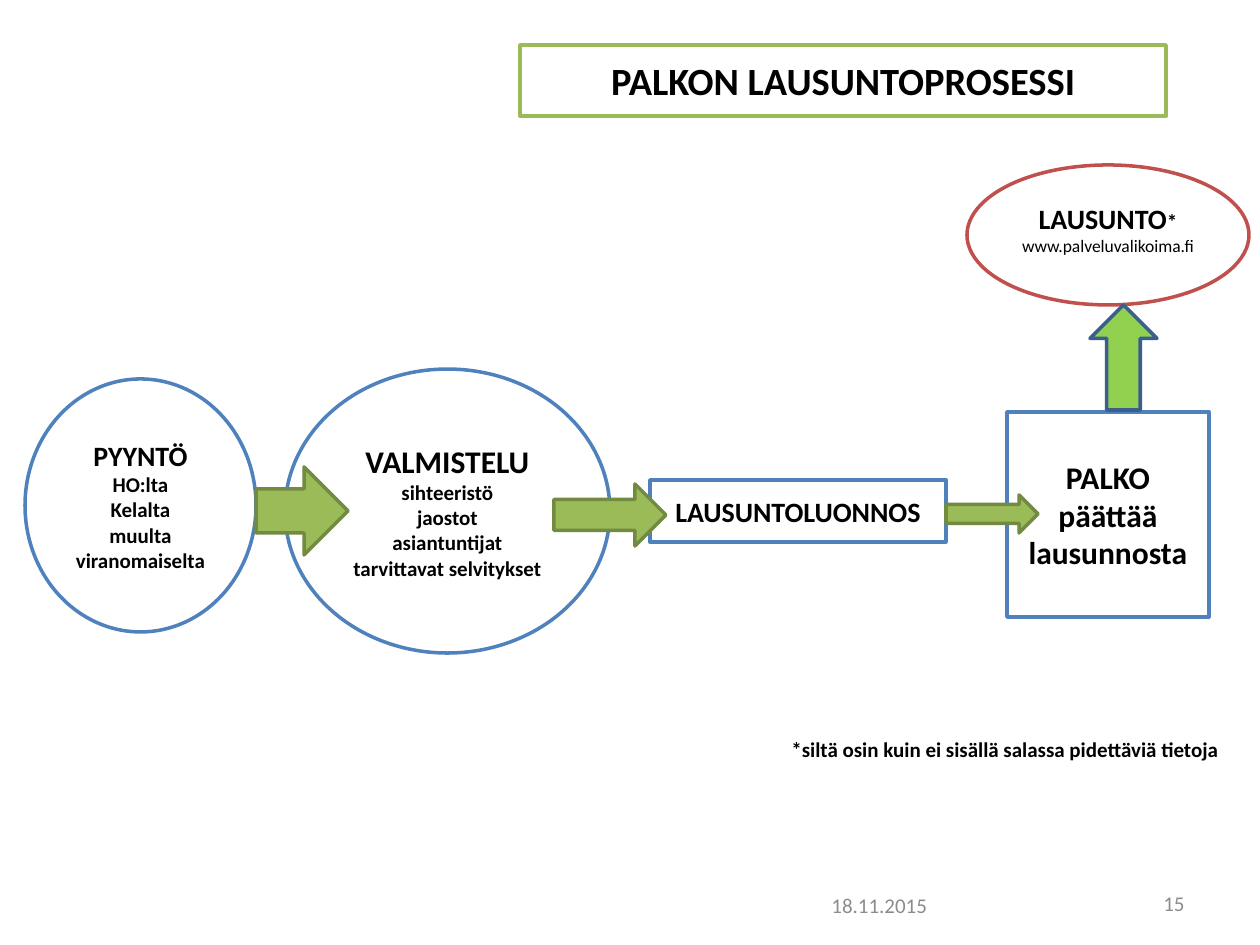
from dataclasses import dataclass

from pptx import Presentation
from pptx import util as u
from pptx.dml.color import RGBColor
from pptx.enum import shapes, text

PX = 914400 / 126
SHAPE, ALIGN = shapes.MSO_SHAPE, text.PP_ALIGN


@dataclass(frozen=True)
class Theme:
    font: str = "Calibri"
    ink: str = "000000"
    muted: str = "8C8C8C"
    paper: str = "FFFFFF"
    blue: str = "4F81BD"
    green: str = "9BBB59"
    green_edge: str = "738A42"
    red: str = "C0504D"
    bright: str = "92D050"
    navy: str = "3A5F8C"
    line: int = 2
    title: int = 22
    large: int = 18
    medium: int = 16
    small: int = 12
    tiny: int = 10


T = Theme()

# Each paragraph is a list of runs: (text, size, bold)
VALMISTELU = [[("VALMISTELU", T.large, True)]] + [
    [(line, T.small, True)]
    for line in ("sihteeristö", "jaostot", "asiantuntijat", "tarvittavat selvitykset")]
PYYNTO = [[("PYYNTÖ", T.medium, True)]] + [
    [(line, T.small, True)]
    for line in ("HO:lta", "Kelalta", "muulta viranomaiselta")]
LAUSUNTO = [[("LAUSUNTO", T.medium, True), ("*", T.small, True)],
            [("www.palveluvalikoima.fi", T.tiny, False)]]

# shape, (left, top, width, height) in px, line colour, paragraphs
STEPS = [
    (SHAPE.RECTANGLE, (520, 45, 646, 71), T.green,
     [[("PALKON LAUSUNTOPROSESSI", T.title, True)]]),
    (SHAPE.OVAL, (285, 369, 325, 284), T.blue, VALMISTELU),
    (SHAPE.OVAL, (25, 379, 231, 253), T.blue, PYYNTO),
    (SHAPE.RECTANGLE, (1007, 412, 202, 205), T.blue,
     [[("PALKO päättää lausunnosta", T.large, True)]]),
    (SHAPE.RECTANGLE, (650, 480, 296, 62), T.blue,
     [[("LAUSUNTOLUONNOS", T.medium, True)]]),
    (SHAPE.OVAL, (967, 165, 282, 140), T.red, LAUSUNTO),
]

# shape, box in px, fill, line colour
ARROWS = [
    (SHAPE.RIGHT_ARROW, (256, 467, 92, 88), T.green, T.green_edge),
    (SHAPE.RIGHT_ARROW, (554, 484, 112, 62), T.green, T.green_edge),
    (SHAPE.RIGHT_ARROW, (946, 495, 92, 38), T.green, T.green_edge),
    (SHAPE.UP_ARROW, (1090, 305, 67, 105), T.bright, T.navy),
]

# text, box in px, colour, bold, alignment, anchor
NOTES = [
    ("18.11.2015", (819, 880, 294, 50), T.muted, False, ALIGN.LEFT, text.MSO_ANCHOR.MIDDLE),
    ("15", (1116, 880, 81, 47), T.muted, False, ALIGN.RIGHT, text.MSO_ANCHOR.MIDDLE),
    ("*siltä osin kuin ei sisällä salassa pidettäviä tietoja", (779, 730, 481, 38),
     T.ink, True, ALIGN.LEFT, text.MSO_ANCHOR.TOP),
]


def px(n):
    return u.Emu(round(n * PX))


def write(s, paragraphs, colour, align, anchor):
    tf = s.text_frame
    tf.word_wrap = True
    tf.vertical_anchor = anchor
    for i, runs in enumerate(paragraphs):
        p = tf.add_paragraph() if i else tf.paragraphs[0]
        p.alignment = align
        for words, size, bold in runs:
            r = p.add_run()
            r.text = words
            r.font.name, r.font.size, r.font.bold = T.font, u.Pt(size), bold
            r.font.color.rgb = RGBColor.from_string(colour)


def draw(sl, kind, box, fill, line):
    s = sl.shapes.add_shape(kind, *map(px, box))
    s.shadow.inherit = False
    s.fill.solid()
    s.fill.fore_color.rgb = RGBColor.from_string(fill)
    s.line.color.rgb = RGBColor.from_string(line)
    s.line.width = u.Pt(T.line)
    return s


def main():
    prs = Presentation()
    prs.slide_width, prs.slide_height = px(1260), px(945)
    sl = prs.slides.add_slide(prs.slide_layouts[6])
    for kind, box, line, paragraphs in STEPS:
        s = draw(sl, kind, box, T.paper, line)
        write(s, paragraphs, T.ink, ALIGN.CENTER, text.MSO_ANCHOR.MIDDLE)
        if paragraphs is LAUSUNTO:
            s.text_frame.margin_bottom = px(18)  # lifts the text above centre
    for arrow in ARROWS:
        draw(sl, *arrow)
    for words, box, colour, bold, align, anchor in NOTES:
        s = sl.shapes.add_textbox(*map(px, box))
        write(s, [[(words, T.small, bold)]], colour, align, anchor)
    prs.save("out.pptx")


if __name__ == "__main__":
    main()
